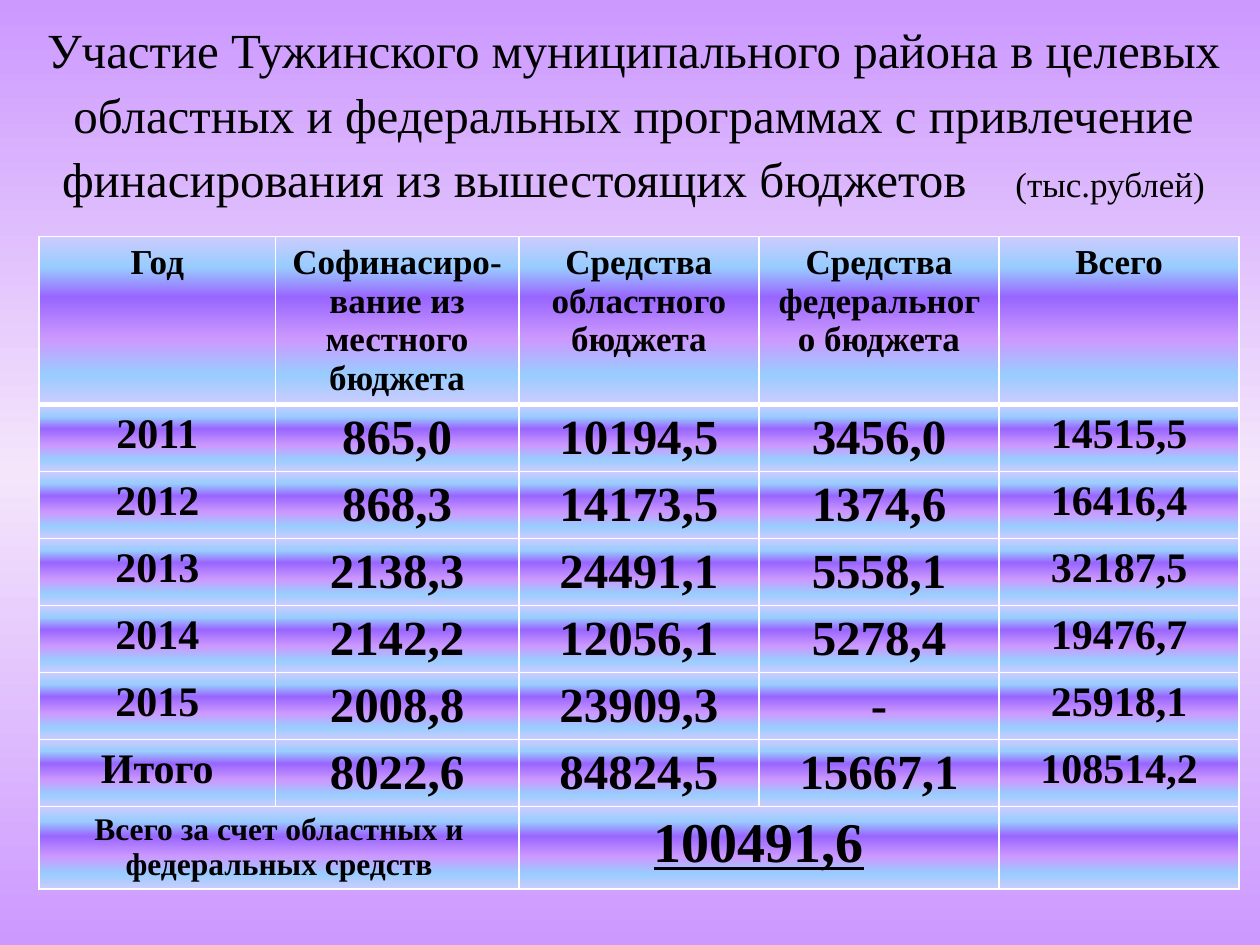
"""Build the slide on district funding by budget source."""
from dataclasses import dataclass

from lxml import etree
from pptx import Presentation
from pptx import util as u
from pptx.dml.color import RGBColor
from pptx.enum import text as t
from pptx.oxml.ns import qn

FONT = "Times New Roman"
HUES = {"ink": "000000", "line": "FFFFFF", "pale": "CCCCFF", "sky": "99CCFF",
        "deep": "9966FF", "lilac": "CC99FF", "mist": "F4E5FB"}
BACK = [(0, "lilac"), (50, "mist"), (100, "lilac")]
BANDS = [(0, "pale"), (18, "sky"), (36, "deep"), (61, "lilac"), (82, "sky"), (100, "pale")]
COLS = [4.76, 4.91, 4.84, 4.84, 4.84]


@dataclass
class Row:
    tall: float
    words: list[str]
    sizes: list[int]


def data(*words: str) -> Row:
    return Row(1.35, list(words), [24, 28, 28, 28, 24])


ROWS = [
    Row(3.38, ["Год", "Софинасиро- вание из местного бюджета",
               "Средства областного бюджета", "Средства федерального бюджета",
               "Всего"], [20] * 5),
    data("2011", "865,0", "10194,5", "3456,0", "14515,5"),
    data("2012", "868,3", "14173,5", "1374,6", "16416,4"),
    data("2013", "2138,3", "24491,1", "5558,1", "32187,5"),
    data("2014", "2142,2", "12056,1", "5278,4", "19476,7"),
    data("2015", "2008,8", "23909,3", "-", "25918,1"),
    data("Итого", "8022,6", "84824,5", "15667,1", "108514,2"),
    Row(1.65, ["Всего за счет областных и федеральных средств", "", "100491,6", "", ""],
        [18, 18, 32, 32, 18]),
]


def tint(node, hue: str) -> None:
    etree.SubElement(node, qn("a:srgbClr"), val=HUES[hue])


def blend(node, stops: list[tuple[int, str]]) -> None:
    fill = etree.SubElement(node, qn("a:gradFill"), rotWithShape="1")
    group = etree.SubElement(fill, qn("a:gsLst"))
    for place, hue in stops:
        tint(etree.SubElement(group, qn("a:gs"), pos=str(place * 1000)), hue)
    etree.SubElement(fill, qn("a:lin"), ang="5400000", scaled="0")


def edge(node, side: str, width: float) -> None:
    line = etree.SubElement(node, qn(f"a:{side}"), w=str(u.Pt(width)))
    tint(etree.SubElement(line, qn("a:solidFill")), "line")


def style(run, size: int, bold: bool = False) -> None:
    run.font.name = FONT
    run.font.size = u.Pt(size)
    run.font.bold = bold
    run.font.color.rgb = RGBColor.from_string(HUES["ink"])


def paint(slide) -> None:
    slide.background.fill.solid()
    base = slide.element.find(".//" + qn("p:bgPr"))
    base.remove(base.find(qn("a:solidFill")))
    blend(base, BACK)
    base.insert(0, base[-1])


def head(slide) -> None:
    title = slide.shapes.title
    title.left, title.top, title.width, title.height = map(u.Cm, (0.58, 0.64, 24.38, 3.18))
    frame = title.text_frame
    frame.word_wrap = True
    frame.auto_size = t.MSO_AUTO_SIZE.NONE
    frame.vertical_anchor = t.MSO_ANCHOR.MIDDLE
    para = frame.paragraphs[0]
    para.alignment = t.PP_ALIGN.CENTER
    para.line_spacing = 1.1
    parts = [("Участие Тужинского муниципального района в целевых областных и федеральных "
              "программах с привлечение финасирования из вышестоящих бюджетов", 28),
             (" ", 28), ("(тыс.рублей)", 20)]
    for words, size in parts:
        run = para.add_run()
        run.text = words
        style(run, size)
    para.runs[1].font._element.set("spc", "2100")


def write(cell, words: str, size: int, top: float, foot: float) -> None:
    para = cell.text_frame.paragraphs[0]
    para.text = words
    para.alignment = t.PP_ALIGN.CENTER
    for run in para.runs:
        style(run, size, True)
    props = cell._tc.get_or_add_tcPr()
    for side, width in (("lnL", 1), ("lnR", 1), ("lnT", top), ("lnB", foot)):
        edge(props, side, width)
    blend(props, BANDS)


def grid(slide) -> None:
    tall = sum(row.tall for row in ROWS)
    frame = slide.shapes.add_table(len(ROWS), len(COLS), u.Cm(0.79), u.Cm(4.77),
                                   u.Cm(sum(COLS)), u.Cm(tall))
    table = frame.table
    table.horz_banding = False
    for col, wide in zip(table.columns, COLS):
        col.width = u.Cm(wide)
    for r, row in enumerate(ROWS):
        table.rows[r].height = u.Cm(row.tall)
        for c, (words, size) in enumerate(zip(row.words, row.sizes)):
            write(table.cell(r, c), words, size, 3 if r == 1 else 1, 3 if r == 0 else 1)
    last = len(ROWS) - 1
    for c in (0, 2):
        table.cell(last, c).merge(table.cell(last, c + 1))
    table.cell(last, 2).text_frame.paragraphs[0].runs[0].font.underline = True


def main() -> None:
    deck = Presentation()
    deck.slide_width, deck.slide_height = u.Cm(25.4), u.Cm(19.05)
    slide = deck.slides.add_slide(deck.slide_layouts[5])
    paint(slide)
    head(slide)
    grid(slide)
    deck.save("out.pptx")


if __name__ == "__main__":
    main()
